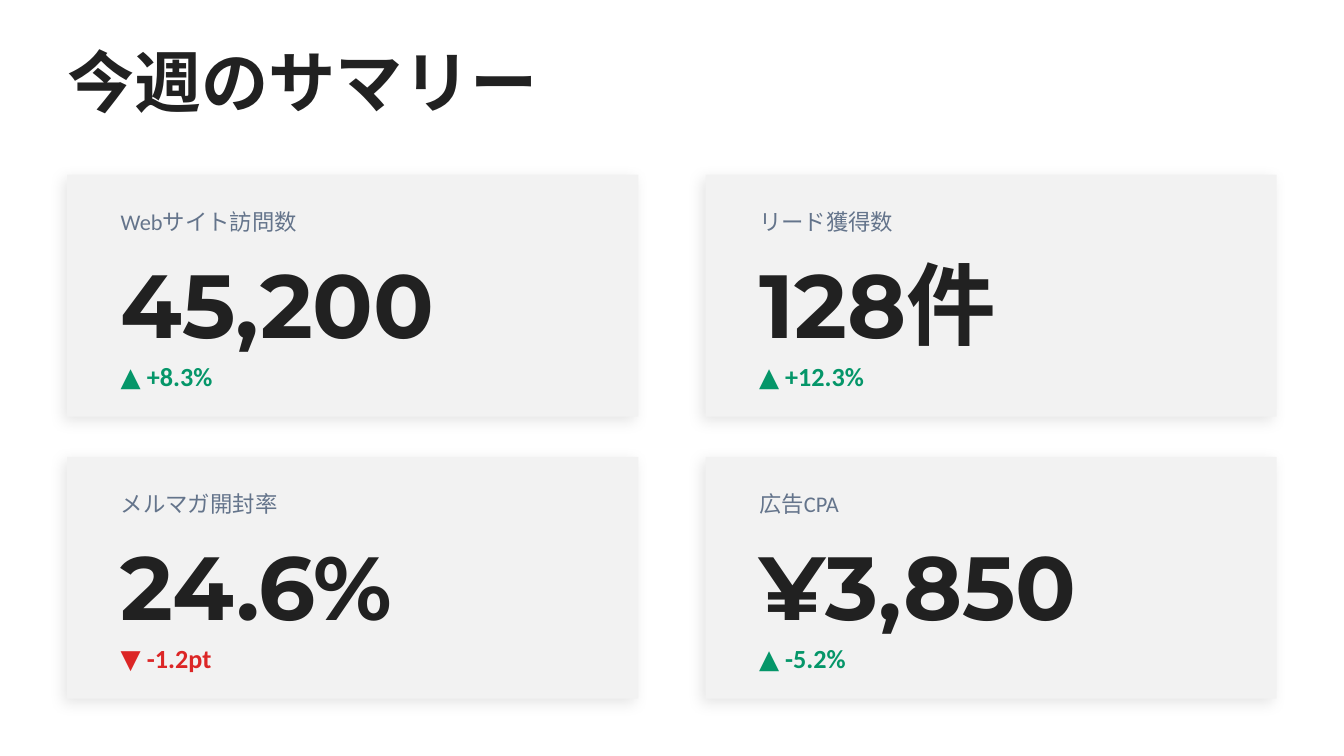
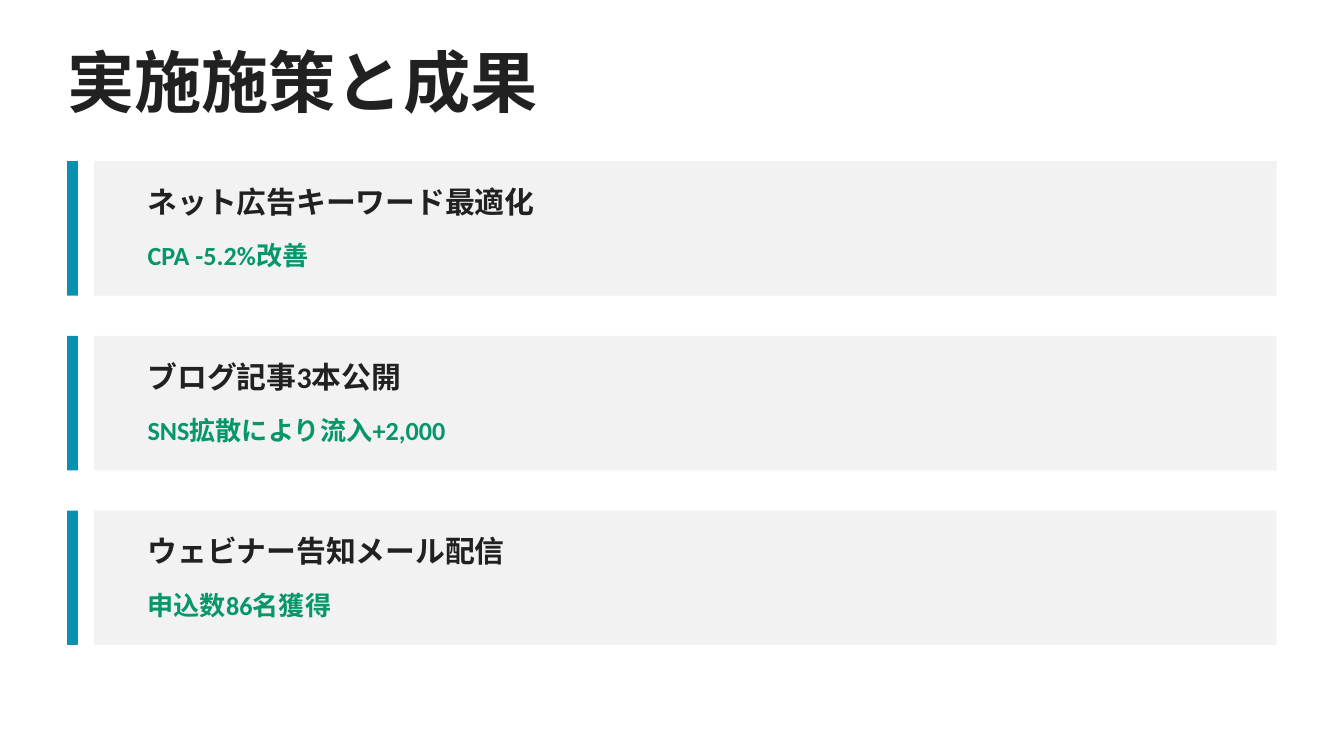
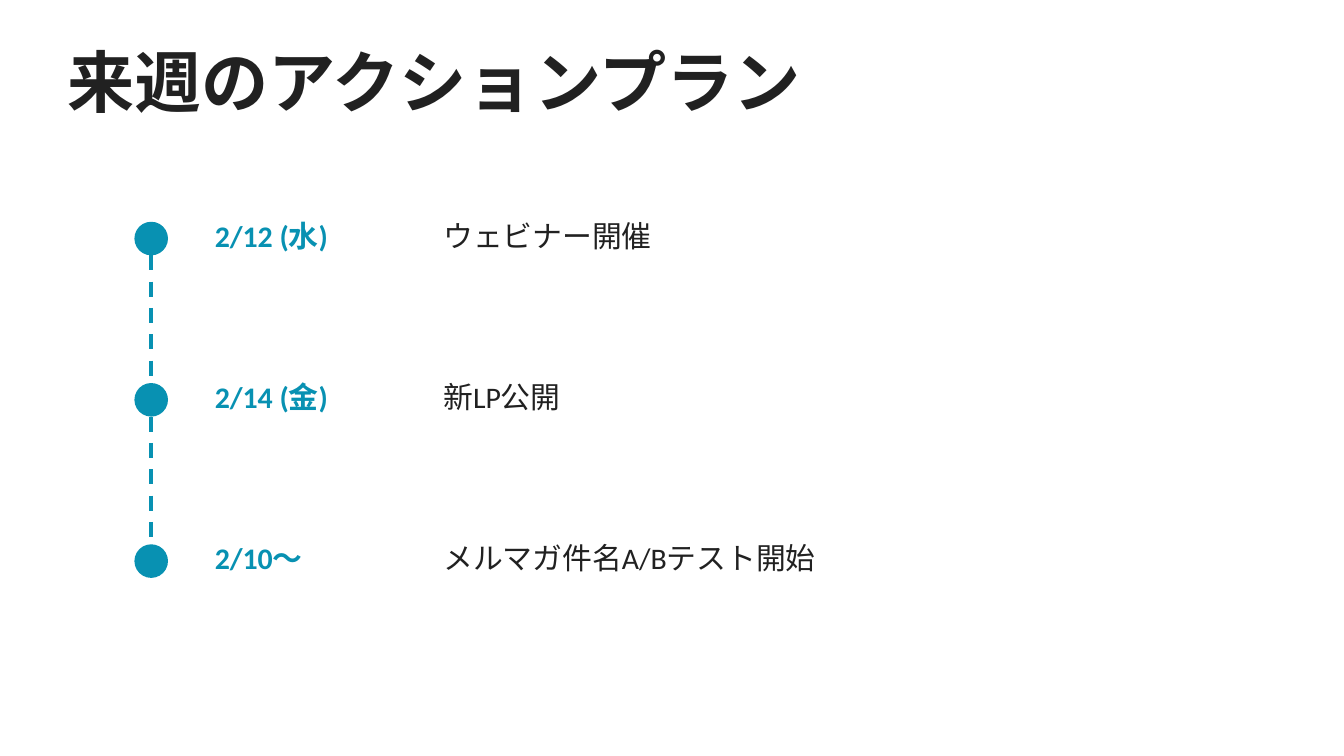
from pptx import Presentation
from pptx.dml import color
from pptx.enum import dml, shapes, text
from pptx.oxml import ns, xmlchemy
from pptx.util import Pt

# Scale: 200 px to the inch
PX = 4572
PAGE_W, PAGE_H = 2000, 1125
MARGIN = 100

# Shared look
HEAD_FONT, BODY_FONT = "Montserrat", "Calibri"
WHITE, INK, MUTED, PANEL = "FFFFFF", "212121", "64748B", "F2F2F2"
ACCENT, GOOD, BAD = "0891B2", "059669", "DC2626"

# Content
METRICS = [
    ("Webサイト訪問数", "45,200", "▲ +8.3%", GOOD),
    ("リード獲得数", "128件", "▲ +12.3%", GOOD),
    ("メルマガ開封率", "24.6%", "▼ -1.2pt", BAD),
    ("広告CPA", "¥3,850", "▲ -5.2%", GOOD),
]
MEASURES = [
    ("ネット広告キーワード最適化", "CPA -5.2%改善"),
    ("ブログ記事3本公開", "SNS拡散により流入+2,000"),
    ("ウェビナー告知メール配信", "申込数86名獲得"),
]
ACTIONS = [
    ("2/12 (水)", "ウェビナー開催"),
    ("2/14 (金)", "新LP公開"),
    ("2/10〜", "メルマガ件名A/Bテスト開始"),
]


def px(*lengths):
    return [length * PX for length in lengths]


def rgb(value):
    return color.RGBColor.from_string(value)


def add_child(parent, tag, **attributes):
    child = xmlchemy.OxmlElement(tag)
    for name, value in attributes.items():
        child.set(name, str(value))
    parent.append(child)
    return child


# Elements
def add_text(page, content, left, top, width, height, size,
             font=BODY_FONT, ink=INK, bold=False, inset=True):
    box = page.shapes.add_textbox(*px(left, top, width, height))
    frame = box.text_frame
    frame.word_wrap = True
    frame.vertical_anchor = text.MSO_ANCHOR.MIDDLE
    if not inset:
        frame.margin_left = frame.margin_right = 0
        frame.margin_top = frame.margin_bottom = 0
    span = frame.paragraphs[0].add_run()
    span.text = content
    span.font.name = font
    span.font.size = Pt(size)
    span.font.bold = bold
    span.font.color.rgb = rgb(ink)
    add_child(span.font._element, "a:ea", typeface=font)


def add_block(page, left, top, width, height, fill,
              kind=shapes.MSO_SHAPE.RECTANGLE):
    block = page.shapes.add_shape(kind, *px(left, top, width, height))
    block.shadow.inherit = False
    block.fill.solid()
    block.fill.fore_color.rgb = rgb(fill)
    block.line.fill.background()
    return block


def cast_shadow(block):
    effects = block._element.spPr.find(ns.qn("a:effectLst"))
    shadow = add_child(effects, "a:outerShdw", blurRad=Pt(8), dist=Pt(3),
                       dir=135 * 60000, algn="bl", rotWithShape=0)
    tint = add_child(shadow, "a:srgbClr", val="000000")
    add_child(tint, "a:alpha", val=10000)


def add_dashed_line(page, x, top, bottom):
    line = page.shapes.add_connector(
        shapes.MSO_CONNECTOR.STRAIGHT, *px(x, top, x, bottom))
    line.line.color.rgb = rgb(ACCENT)
    line.line.width = Pt(2)
    line.line.dash_style = dml.MSO_LINE.DASH
    add_child(line._element.spPr, "a:effectLst")


def add_page(deck, title):
    page = deck.slides.add_slide(deck.slide_layouts[6])
    page.background.fill.solid()
    page.background.fill.fore_color.rgb = rgb(WHITE)
    add_text(page, title, MARGIN, 60, PAGE_W - 2 * MARGIN, 120, 36,
             font=HEAD_FONT, bold=True, inset=False)
    return page


def add_metric_card(page, left, top, label, figure, change, change_ink):
    cast_shadow(add_block(page, left, top, 850, 360, PANEL))
    inner, width = left + 60, 730
    add_text(page, label, inner, top + 40, width, 60, 12, ink=MUTED)
    add_text(page, figure, inner, top + 120, width, 140, 48,
             font=HEAD_FONT, bold=True)
    add_text(page, change, inner, top + 270, width, 60, 14,
             ink=change_ink, bold=True)


def add_measure_row(page, top, name, result):
    add_block(page, MARGIN, top, 16, 200, ACCENT)
    add_block(page, 140, top, 1760, 200, PANEL)
    add_text(page, name, 200, top + 30, 1000, 60, 16, bold=True)
    add_text(page, result, 200, top + 110, 1640, 60, 14, ink=GOOD, bold=True)


def add_action(page, top, date, task):
    add_block(page, 200, top + 30, 50, 50, ACCENT, shapes.MSO_SHAPE.OVAL)
    add_text(page, date, 300, top, 300, 100, 16, ink=ACCENT, bold=True)
    add_text(page, task, 640, top, 1260, 100, 16)


# Slides
def build_summary(deck):
    page = add_page(deck, "今週のサマリー")
    for index, metric in enumerate(METRICS):
        row, column = divmod(index, 2)
        add_metric_card(page, MARGIN + column * 950, 260 + row * 420, *metric)


def build_measures(deck):
    page = add_page(deck, "実施施策と成果")
    for index, measure in enumerate(MEASURES):
        add_measure_row(page, 240 + index * 260, *measure)


def build_action_plan(deck):
    page = add_page(deck, "来週のアクションプラン")
    step = 240
    for index, action in enumerate(ACTIONS):
        top = 300 + index * step
        add_action(page, top, *action)
        if index < len(ACTIONS) - 1:
            add_dashed_line(page, 225, top + 80, top + step + 30)


def main():
    deck = Presentation()
    deck.slide_width, deck.slide_height = px(PAGE_W, PAGE_H)
    build_summary(deck)
    build_measures(deck)
    build_action_plan(deck)
    deck.save("out.pptx")


if __name__ == "__main__":
    main()
